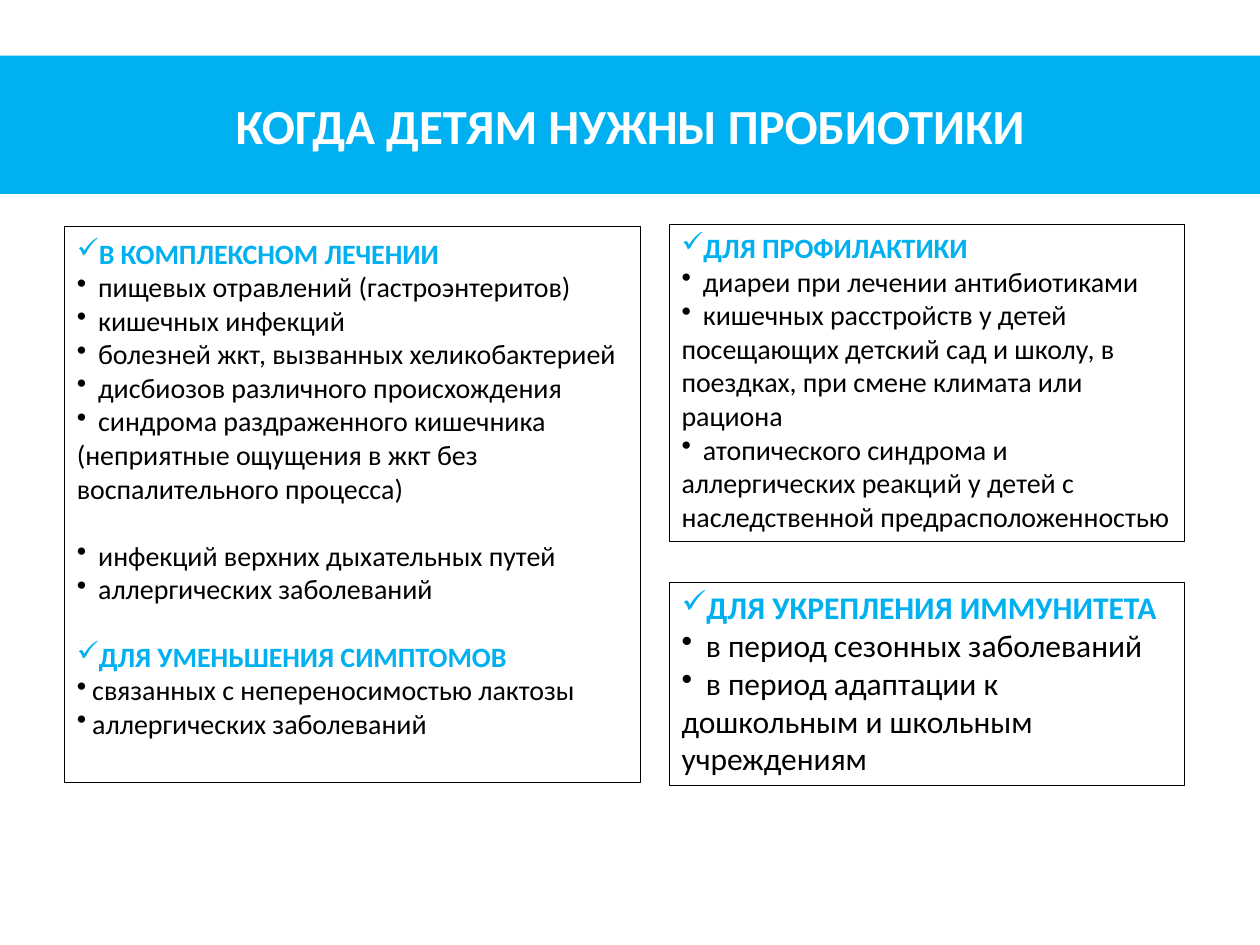
import pptx
import pptx.util
from lxml import etree
from pptx.dml.color import RGBColor
from pptx.enum.shapes import MSO_SHAPE
from pptx.enum.text import MSO_ANCHOR, MSO_AUTO_SIZE, PP_ALIGN
from pptx.oxml.ns import qn
from pptx.util import Cm, Pt

COLORS = {"accent": "00B0F0", "text": "000000", "title": "FFFFFF"}
FONT = "Calibri"

TREATMENT = [
    ("В КОМПЛЕКСНОМ ЛЕЧЕНИИ", 0.43, [
        "пищевых отравлений (гастроэнтеритов)",
        "кишечных инфекций",
        "болезней жкт, вызванных хеликобактерией",
        "дисбиозов различного происхождения",
        "синдрома раздраженного кишечника (неприятные ощущения в жкт без "
        "воспалительного процесса)",
        "инфекций верхних дыхательных путей",
        "аллергических заболеваний",
    ]),
    ("ДЛЯ УМЕНЬШЕНИЯ СИМПТОМОВ", 0.31, [
        "связанных с непереносимостью лактозы",
        "аллергических заболеваний",
    ]),
]
SPACED_ITEM = "инфекций верхних дыхательных путей"
PREVENTION = [
    ("ДЛЯ ПРОФИЛАКТИКИ", 0.43, [
        "диареи при лечении антибиотиками",
        "кишечных расстройств у детей посещающих детский сад и школу, "
        "в поездках, при смене климата или рациона",
        "атопического синдрома и аллергических реакций у детей с "
        "наследственной предрасположенностью",
    ]),
]
IMMUNITY = [
    ("ДЛЯ УКРЕПЛЕНИЯ ИММУНИТЕТА", 0.49, [
        "в период сезонных заболеваний",
        "в период адаптации к дошкольным и школьным учреждениям",
    ]),
]


def rgb(name):
    return RGBColor.from_string(COLORS[name])


def format_font(font, size, color, bold):
    font.name, font.size, font.bold = FONT, Pt(size), bold
    font.color.rgb = rgb(color)


def set_bullet(p, char, tab=None):
    """Bullet at the margin; an optional tab stop (cm) sets the text off from it."""
    pPr = p._p.get_or_add_pPr()
    pPr.set("marL", "0")
    pPr.set("indent", "0")
    etree.SubElement(pPr, qn("a:buChar"), char=char)
    if tab:
        tabs = etree.SubElement(pPr, qn("a:tabLst"))
        etree.SubElement(tabs, qn("a:tab"), pos=str(Cm(tab)), algn="l")


def title_band(s, left, top, width, height):
    sp = s.shapes.title
    sp.left, sp.top, sp.width, sp.height = left, top, width, height
    sp.fill.solid()
    sp.fill.fore_color.rgb = rgb("accent")
    tf = sp.text_frame
    tf.text = "КОГДА ДЕТЯМ НУЖНЫ ПРОБИОТИКИ"
    tf.vertical_anchor = MSO_ANCHOR.MIDDLE
    tf.auto_size = MSO_AUTO_SIZE.NONE
    p = tf.paragraphs[0]
    p.alignment = PP_ALIGN.CENTER
    format_font(p.runs[0].font, 28, "title", True)


def list_box(s, left, top, width, height, sections, size, inset=0.13):
    """Outlined box of checked headings, each followed by its bulleted items."""
    sp = s.shapes.add_shape(MSO_SHAPE.RECTANGLE, left, top, width, height)
    sp.shadow.inherit = False
    sp.fill.background()
    sp.line.color.rgb = rgb("text")
    sp.line.width = Pt(0.25)
    tf = sp.text_frame
    tf.word_wrap = True
    tf.vertical_anchor = MSO_ANCHOR.TOP
    tf.margin_top = Cm(inset)

    lines = []
    for heading, tab, items in sections:
        lines.append((heading, None))
        lines += [(item, tab) for item in items]
    for i, (text, tab) in enumerate(lines):
        p = tf.add_paragraph() if i else tf.paragraphs[0]
        p.text = "\t" + text if tab else text
        p.alignment = PP_ALIGN.LEFT
        set_bullet(p, "•" if tab else "✓", tab)
        if i and (tab is None or text == SPACED_ITEM):
            p.space_before = Pt(size * 1.2)
        format_font(p.runs[0].font, size, "text" if tab else "accent", not tab)


def main():
    prs = pptx.Presentation()
    prs.slide_width, prs.slide_height = Cm(25.4), Cm(19.05)
    s = prs.slides.add_slide(prs.slide_layouts[5])
    title_band(s, 0, Cm(1.12), prs.slide_width, Cm(2.79))
    list_box(s, Cm(1.3), Cm(4.57), Cm(11.61), Cm(11.2), TREATMENT, 16, inset=0.19)
    right, width = Cm(13.49), Cm(10.39)
    list_box(s, right, Cm(4.52), width, Cm(6.4), PREVENTION, 16)
    list_box(s, right, Cm(11.73), width, Cm(4.11), IMMUNITY, 18)
    prs.save("out.pptx")


if __name__ == "__main__":
    main()
